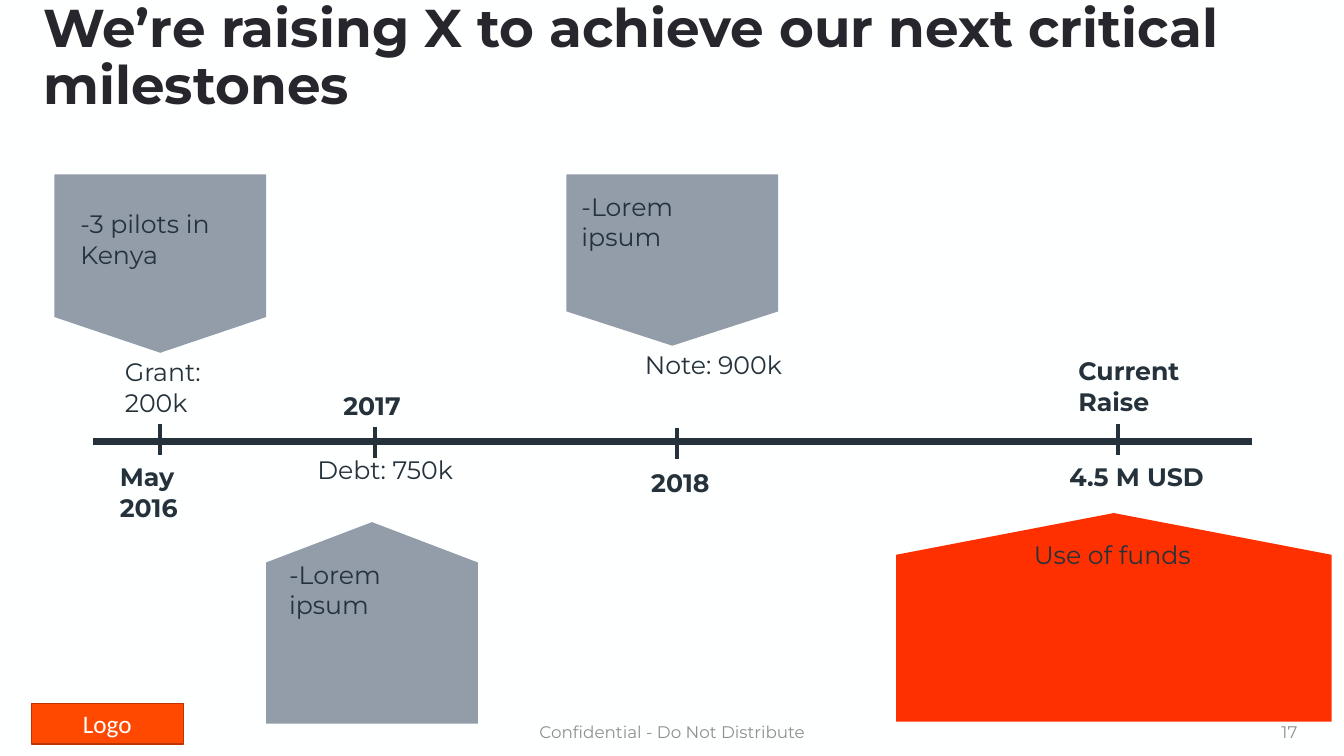
from collections import namedtuple
from dataclasses import dataclass

from lxml.etree import SubElement
from pptx import Presentation
from pptx.dml.color import RGBColor
from pptx.enum.shapes import MSO_CONNECTOR, MSO_SHAPE
from pptx.enum.text import MSO_ANCHOR, MSO_AUTO_SIZE, PP_ALIGN
from pptx.oxml.ns import qn
from pptx.util import Inches, Pt

Box = namedtuple("Box", "column row columns rows")
Flag = namedtuple("Flag", "box turn color")
Label = namedtuple("Label", "text box bold align", defaults=(False, PP_ALIGN.LEFT))
Milestone = namedtuple("Milestone", "column tick_row flag labels")


@dataclass(frozen=True)
class Theme:
    paper: str = "FEFFFF"
    heading: str = "28262D"
    ink: str = "25323B"
    muted: str = "8E9092"
    flag: str = "939DA9"
    raise_flag: str = "FF3000"
    logo: str = "FF4800"
    logo_edge: str = "BD3500"
    font: str = "Montserrat"
    logo_font: str = "Calibri"
    title_size: int = 38
    body_size: int = 18
    footer_size: int = 12
    axis_width: float = 4.5
    tick_width: float = 3


THEME = Theme()
CELL = Inches(0.1)
SLIDE = Box(0, 0, 133.33, 75)
TIMELINE = Box(9.2, 43.8, 115, 0)
TICK_ROWS = 3
CENTER = PP_ALIGN.CENTER

MILESTONES = [
    Milestone(15.9, -1.7, Flag(Box(-10.5, -26.5, 21, 17.7), 0, THEME.flag), [
        Label("Grant: 200k", Box(-4.5, -8.9, 15.6, 7.1)),
        Label("May 2016", Box(-5, 1.5, 12.8, 7.1), True),
        Label("-3 pilots in Kenya", Box(-8.9, -23.6, 18.3, 7.1)),
    ]),
    Milestone(37.2, -1.4, Flag(Box(-10.8, 8, 21, 20), 180, THEME.flag), [
        Label("2017", Box(-6.7, -5.6, 12.8, 4), True, CENTER),
        Label("Debt: 750k", Box(-6.7, 0.8, 15.6, 7.1)),
        Label("-Lorem ipsum", Box(-9.5, 11.2, 18.3, 7.1)),
    ]),
    Milestone(67.2, -1.3, Flag(Box(-11, -26.5, 21, 17), 0, THEME.flag), [
        Label("2018", Box(-6.1, 2.1, 12.8, 4), True, CENTER),
        Label("Note: 900k", Box(-4.2, -9.6, 15.6, 7.1)),
        Label("-Lorem ipsum", Box(-10.5, -25.3, 18.3, 7.1)),
    ]),
    Milestone(110.9, -1.7, Flag(Box(-22, 7.1, 43.2, 20.7), 180, THEME.raise_flag), [
        Label("4.5 M USD", Box(-5.8, 1.5, 16.4, 4), True),
        Label("Current Raise", Box(-4.9, -9, 16.4, 7.1), True),
        Label("Use of funds", Box(-9.7, 9.2, 18.3, 4), False, CENTER),
    ]),
]


def rgb(color):
    return RGBColor.from_string(color)


def apply(target, values):
    for name, value in values.items():
        setattr(target, name, value)


def within(region, box):
    return Box(region.column + box.column, region.row + box.row, box.columns, box.rows)


def place(box):
    return [round(length * CELL) for length in box]


def write(holder, text, color, size, bold=False, align=PP_ALIGN.LEFT,
          anchor=MSO_ANCHOR.TOP, font=THEME.font, fit=MSO_AUTO_SIZE.NONE):
    frame = holder.text_frame
    frame.text = text
    apply(frame, {"word_wrap": True, "auto_size": fit, "vertical_anchor": anchor})
    paragraph = frame.paragraphs[0]
    paragraph.alignment = align
    run_font = paragraph.runs[0].font
    apply(run_font, {"name": font, "size": Pt(size), "bold": bold})
    run_font.color.rgb = rgb(color)
    return paragraph


def add_block(slide, preset, box, color):
    block = slide.shapes.add_shape(preset, *place(box))
    block.shadow.inherit = False
    block.fill.solid()
    block.fill.fore_color.rgb = rgb(color)
    block.line.fill.background()
    return block


def add_rule(slide, box, width):
    left, top, across, down = place(box)
    rule = slide.shapes.add_connector(
        MSO_CONNECTOR.STRAIGHT, left, top, left + across, top + down)
    rule.line.color.rgb = rgb(THEME.ink)
    rule.line.width = Pt(width)
    SubElement(rule._element.spPr, qn("a:effectLst"))


def add_heading(slide, region):
    title = slide.shapes.title
    apply(title, dict(zip(("left", "top", "width", "height"),
                          place(within(region, Box(3.3, 2.5, 126.3, 6.7))))))
    heading = write(title, "We’re raising X to achieve our next critical milestones",
                    THEME.heading, THEME.title_size, True, anchor=MSO_ANCHOR.MIDDLE)
    heading.line_spacing = 0.9


def add_footer(slide, region):
    logo = add_block(slide, MSO_SHAPE.RECTANGLE,
                     within(region, Box(3.1, -0.8, 15.1, 4)), THEME.logo)
    logo.line.color.rgb = rgb(THEME.logo_edge)
    logo.line.width = Pt(1)
    write(logo, "Logo", THEME.paper, THEME.body_size, align=CENTER,
          anchor=MSO_ANCHOR.MIDDLE, font=THEME.logo_font)
    for text, box, align in (
        ("Confidential - Do Not Distribute", Box(44.2, 0, 45, 4), CENTER),
        ("17", Box(99.7, 0, 30, 4), PP_ALIGN.RIGHT),
    ):
        note = slide.shapes.add_textbox(*place(within(region, box)))
        write(note, text, THEME.muted, THEME.footer_size, align=align,
              anchor=MSO_ANCHOR.MIDDLE)


def add_milestone(slide, region, milestone):
    flag = add_block(slide, MSO_SHAPE.FLOWCHART_OFFPAGE_CONNECTOR,
                     within(region, milestone.flag.box), milestone.flag.color)
    flag.rotation = milestone.flag.turn
    add_rule(slide, within(region, Box(0, milestone.tick_row, 0, TICK_ROWS)),
             THEME.tick_width)
    for label in milestone.labels:
        caption = slide.shapes.add_textbox(*place(within(region, label.box)))
        write(caption, label.text, THEME.ink, THEME.body_size, label.bold,
              label.align, fit=MSO_AUTO_SIZE.SHAPE_TO_FIT_TEXT)


def add_timeline(slide, region):
    add_rule(slide, region, THEME.axis_width)
    for milestone in MILESTONES:
        add_milestone(slide, Box(milestone.column, region.row, 0, 0), milestone)


def main():
    deck = Presentation()
    apply(deck, {"slide_width": round(SLIDE.columns * CELL),
                 "slide_height": SLIDE.rows * CELL})
    slide = deck.slides.add_slide(deck.slide_layouts[5])
    slide.background.fill.solid()
    slide.background.fill.fore_color.rgb = rgb(THEME.paper)
    add_heading(slide, SLIDE)
    add_footer(slide, Box(0, 70.6, SLIDE.columns, 4))
    add_timeline(slide, TIMELINE)
    deck.save("out.pptx")


if __name__ == "__main__":
    main()
